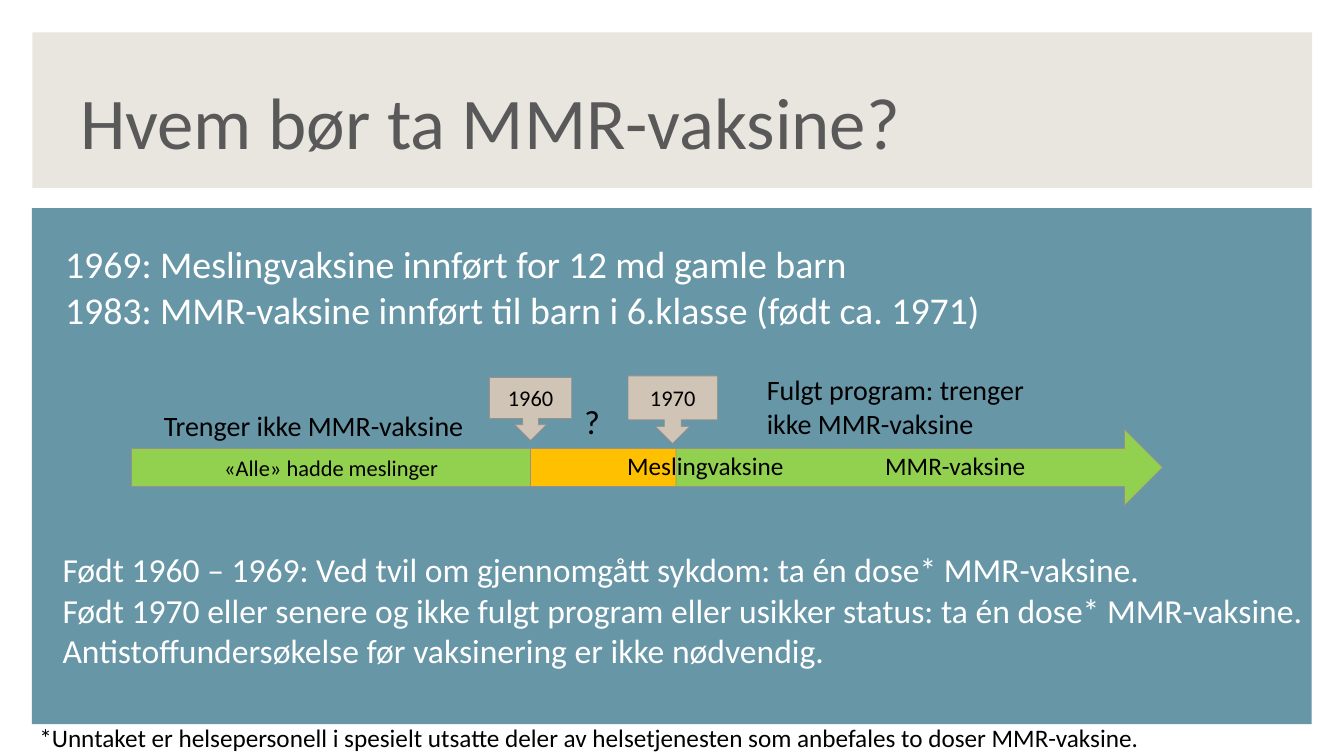
from collections import namedtuple

from pptx import Presentation
from pptx.dml.color import RGBColor
from pptx.enum.shapes import MSO_SHAPE as Shape
from pptx.enum.text import MSO_ANCHOR as Anchor, PP_ALIGN as Align
from pptx.util import Pt

EMU_PER_PX = 9144  # 100 px to the inch
FONT = "Calibri"

WHITE = RGBColor(0xFF, 0xFF, 0xFF)
BLACK = RGBColor(0x00, 0x00, 0x00)
GREY = RGBColor(0x59, 0x59, 0x59)
TEAL = RGBColor(0x67, 0x96, 0xA7)
SAND = RGBColor(0xE9, 0xE6, 0xDF)
TAUPE = RGBColor(0xCF, 0xC4, 0xB6)
OUTLINE = RGBColor(0x99, 0x91, 0x87)
GREEN = RGBColor(0x92, 0xD0, 0x50)
AMBER = RGBColor(0xFF, 0xC0, 0x00)

Box = namedtuple("Box", "left top width height")


def px(length):
    return length * EMU_PER_PX


def inside(box, left, top, width, height):
    """Position and size in EMU of a part, given relative to its region."""
    return [px(v) for v in (box.left + left, box.top + top, width, height)]


def write(shape, text, size, color, align=Align.LEFT):
    shape.text_frame.text = text
    for paragraph in shape.text_frame.paragraphs:
        paragraph.alignment = align
        font = paragraph.font
        font.name, font.size = FONT, Pt(size)
        font.color.rgb = color


def add_text(slide, place, text, size, color, anchor=Anchor.TOP):
    shape = slide.shapes.add_textbox(*place)
    frame = shape.text_frame
    frame.word_wrap = True
    frame.vertical_anchor = anchor
    frame.margin_left = frame.margin_right = 0
    frame.margin_top = frame.margin_bottom = 0
    write(shape, text, size, color)


def add_block(slide, kind, place, fill, outline=None, text=None):
    shape = slide.shapes.add_shape(kind, *place)
    shape.shadow.inherit = False
    shape.fill.solid()
    shape.fill.fore_color.rgb = fill
    if outline is None:
        shape.line.fill.background()
    else:
        shape.line.color.rgb = outline
        shape.line.width = Pt(1)
    if text:
        shape.text_frame.vertical_anchor = Anchor.MIDDLE
        write(shape, text, 32, BLACK, Align.CENTER)


def add_header(slide, box):
    add_block(slide, Shape.RECTANGLE, inside(box, 0, 0, box.width, box.height), SAND)
    add_text(slide, inside(box, 95, 86, 2126, 175), "Hvem bør ta MMR-vaksine?",
             104, GREY, Anchor.BOTTOM)


def add_panel(slide, box):
    add_block(slide, Shape.RECTANGLE, inside(box, 0, 0, box.width, box.height), TEAL)
    # Vaccination history
    add_text(slide, inside(box, 66, 65, 2284, 273),
             "1969: Meslingvaksine innført for 12 md gamle barn\n"
             "1983: MMR-vaksine innført til barn i 6.klasse (født ca. 1971)",
             54, WHITE)
    # Advice by year of birth
    add_text(slide, inside(box, 61, 677, 2520, 250),
             "Født 1960 – 1969: Ved tvil om gjennomgått sykdom: ta én dose* MMR-vaksine.\n"
             "Født 1970 eller senere og ikke fulgt program eller usikker status: "
             "ta én dose* MMR-vaksine.\n"
             "Antistoffundersøkelse før vaksinering er ikke nødvendig.",
             48, WHITE)


def add_timeline(slide, box):
    # Periods
    for kind, place, fill, text in (
        (Shape.RECTANGLE, (780, 155, 300, 77), AMBER, None),
        (Shape.RIGHT_ARROW, (1080, 118, 965, 151), GREEN, None),
        (Shape.RECTANGLE, (0, 156, 792, 76), GREEN, "«Alle» hadde meslinger"),
    ):
        add_block(slide, kind, inside(box, *place), fill, OUTLINE, text)
    # Year markers
    for year, place in (("1960", (710, 15, 163, 125)), ("1970", (985, 12, 177, 134))):
        add_block(slide, Shape.DOWN_ARROW_CALLOUT, inside(box, *place),
                  TAUPE, OUTLINE, year)
    # Labels on and above the arrow
    for text, place, size in (
        ("Meslingvaksine", (983, 160, 400, 61), 36),
        ("MMR-vaksine", (1495, 160, 400, 61), 36),
        ("Trenger ikke MMR-vaksine", (64, 76, 640, 67), 40),
        ("Fulgt program: trenger\nikke MMR-vaksine", (1260, 5, 640, 135), 40),
        ("?", (898, 62, 40, 81), 48),
    ):
        add_text(slide, inside(box, *place), text, size, BLACK)


def add_footnote(slide, box):
    add_text(slide, inside(box, 0, 0, box.width, box.height),
             "*Unntaket er helsepersonell i spesielt utsatte deler av helsetjenesten "
             "som anbefales to doser MMR-vaksine.", 36, BLACK)


def main():
    presentation = Presentation()
    presentation.slide_width, presentation.slide_height = px(2666), px(1500)
    slide = presentation.slides.add_slide(presentation.slide_layouts[6])
    add_panel(slide, Box(63, 413, 2539, 1024))
    add_header(slide, Box(64, 64, 2539, 309))
    add_timeline(slide, Box(261, 734, 2045, 269))
    add_footnote(slide, Box(78, 1433, 2300, 61))
    presentation.save("out.pptx")


if __name__ == "__main__":
    main()
